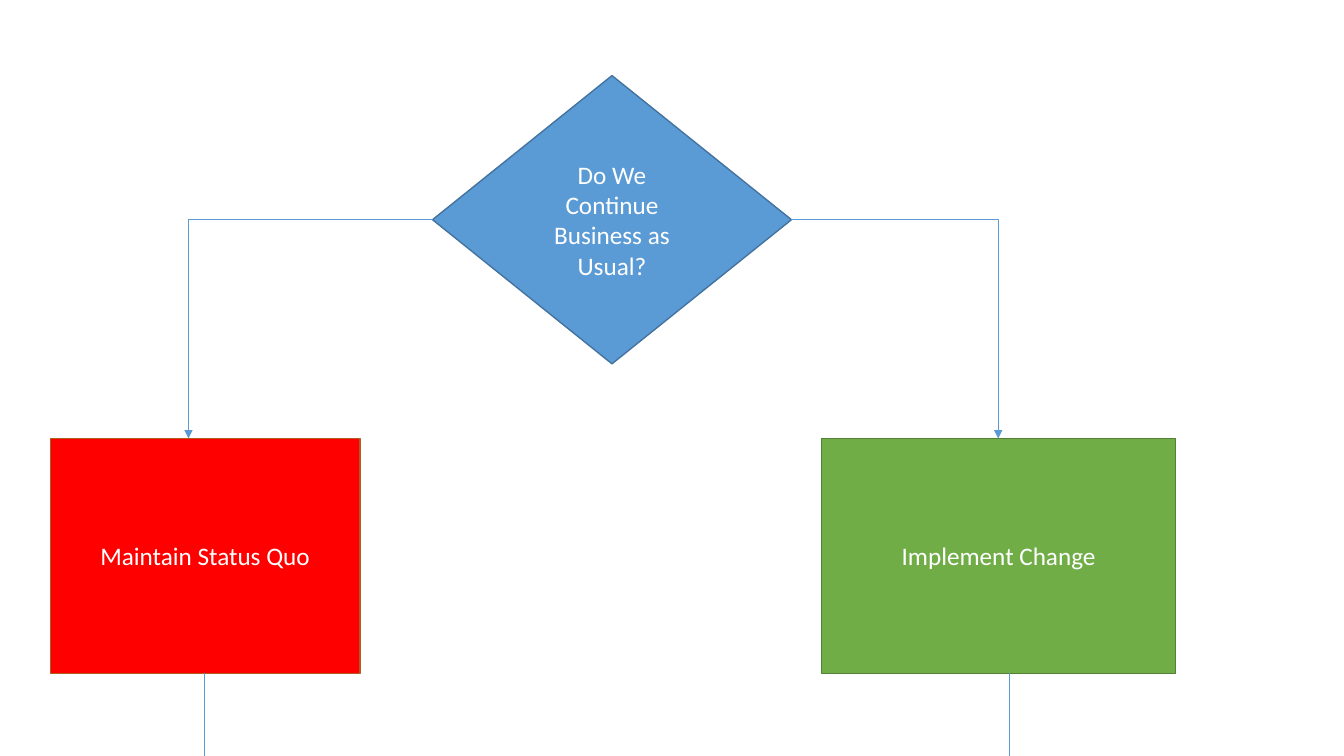
import pptx
import pptx.dml.color
import pptx.enum.shapes
import pptx.enum.text
import pptx.oxml.ns
import pptx.util
from lxml import etree
from pptx.util import Inches

SHAPES = pptx.enum.shapes.MSO_SHAPE
CONNECTORS = pptx.enum.shapes.MSO_CONNECTOR
SLIDE_SIZE = (13.33, 7.5)
LINE_COLOR = "5B9BD5"

# text, preset, (left, top, width, height), fill, outline
NODES = [
    ("Do We Continue Business as Usual?", SHAPES.FLOWCHART_DECISION,
     (4.29, 0.75, 3.56, 2.86), "5B9BD5", "43739E"),
    ("Maintain Status Quo", SHAPES.RECTANGLE,
     (0.5, 4.35, 3.07, 2.33), "FF0000", "AF5C24"),
    ("Implement Change", SHAPES.RECTANGLE,
     (8.15, 4.35, 3.51, 2.33), "70AD47", "538035"),
]
ARROW_X = (1.87, 9.9)
EXIT_X = (2.03, 10.01)


def rgb(color):
    return pptx.dml.color.RGBColor.from_string(color)


def add_node(slide, text, preset, box, fill, outline):
    shape = slide.shapes.add_shape(preset, *map(Inches, box))
    shape.shadow.inherit = False
    shape.fill.solid()
    shape.fill.fore_color.rgb = rgb(fill)
    shape.line.color.rgb = rgb(outline)
    shape.line.width = pptx.util.Pt(1)
    frame = shape.text_frame
    frame.word_wrap = True
    frame.vertical_anchor = pptx.enum.text.MSO_ANCHOR.MIDDLE
    frame.text = text
    paragraph = frame.paragraphs[0]
    paragraph.alignment = pptx.enum.text.PP_ALIGN.CENTER
    paragraph.font.name = "Calibri"
    paragraph.font.size = pptx.util.Pt(18)
    paragraph.font.color.rgb = rgb("FFFFFF")


def add_line(slide, kind, start, end):
    connector = slide.shapes.add_connector(kind, *map(Inches, start + end))
    connector.line.color.rgb = rgb(LINE_COLOR)
    connector.line.width = pptx.util.Pt(0.5)
    properties = connector._element.spPr
    etree.SubElement(properties, pptx.oxml.ns.qn("a:effectLst"))
    return connector


def add_bent_arrow(slide, start, end):
    """Draw an arrow that runs across, then down, with a single bend."""
    connector = add_line(slide, CONNECTORS.ELBOW, start, end)
    properties = connector._element.spPr
    properties.find(pptx.oxml.ns.qn("a:prstGeom")).set("prst", "bentConnector2")
    outline = properties.find(pptx.oxml.ns.qn("a:ln"))
    etree.SubElement(outline, pptx.oxml.ns.qn("a:tailEnd"), type="triangle")


def main():
    presentation = pptx.Presentation()
    presentation.slide_width, presentation.slide_height = map(Inches, SLIDE_SIZE)
    slide = presentation.slides.add_slide(presentation.slide_layouts[6])

    for node in NODES:
        add_node(slide, *node)

    left, top, width, height = NODES[0][2]
    decision_corners = (left, left + width)
    middle = top + height / 2
    for corner, arrow_x, exit_x, option in zip(
            decision_corners, ARROW_X, EXIT_X, NODES[1:]):
        option_top, option_height = option[2][1], option[2][3]
        add_bent_arrow(slide, (corner, middle), (arrow_x, option_top))
        add_line(slide, CONNECTORS.STRAIGHT,
                 (exit_x, option_top + option_height), (exit_x, SLIDE_SIZE[1]))

    presentation.save("out.pptx")


if __name__ == "__main__":
    main()
